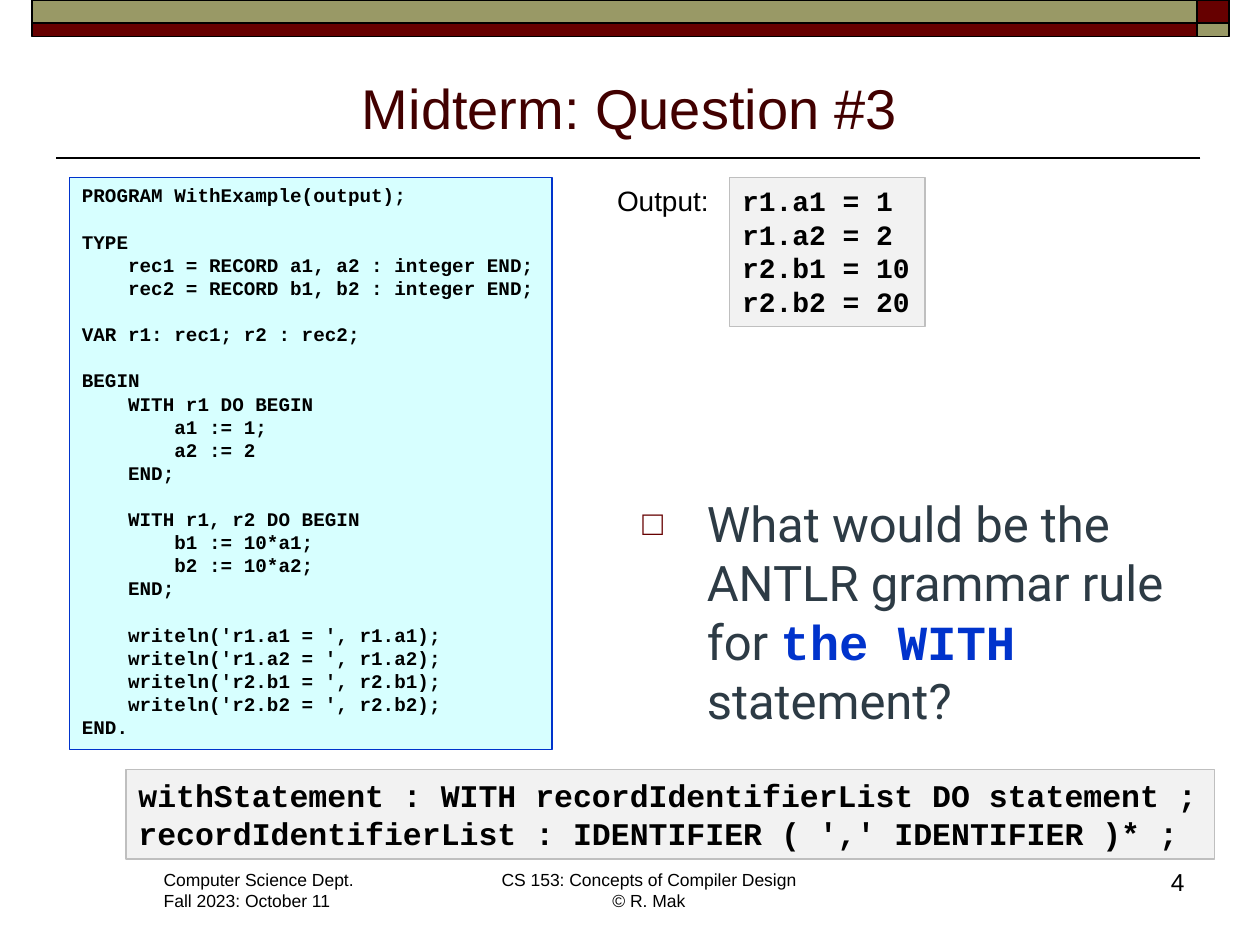
from lxml import etree
from pptx import Presentation
from pptx.dml.color import RGBColor
from pptx.enum.shapes import MSO_CONNECTOR, MSO_SHAPE
from pptx.enum.text import MSO_ANCHOR, MSO_AUTO_SIZE, PP_ALIGN
from pptx.oxml.ns import qn
from pptx.util import Cm, Pt

COLORS = {
    "black": "000000", "maroon": "660000", "olive": "999966", "title": "420000",
    "slate": "2D3B45", "blue": "0033CC", "cyan": "D7FFFF",
    "light gray": "F2F2F2", "gray": "BFBFBF",
}
SANS, MONO, BODY = "Arial", "Courier New", "Roboto"

PROGRAM = """PROGRAM WithExample(output);

TYPE
    rec1 = RECORD a1, a2 : integer END;
    rec2 = RECORD b1, b2 : integer END;

VAR r1: rec1; r2 : rec2;

BEGIN
    WITH r1 DO BEGIN
        a1 := 1;
        a2 := 2
    END;

    WITH r1, r2 DO BEGIN
        b1 := 10*a1;
        b2 := 10*a2;
    END;

    writeln('r1.a1 = ', r1.a1);
    writeln('r1.a2 = ', r1.a2);
    writeln('r2.b1 = ', r2.b1);
    writeln('r2.b2 = ', r2.b2);
END."""
OUTPUT = "r1.a1 = 1\nr1.a2 = 2\nr2.b1 = 10\nr2.b2 = 20"
GRAMMAR = [
    "withStatement : WITH recordIdentifierList DO statement ;",
    "recordIdentifierList : IDENTIFIER ( ',' IDENTIFIER )* ;",
]


def rgb(name):
    return RGBColor.from_string(COLORS[name])


def add_text(box, texts, size, font=SANS, color="black", align=PP_ALIGN.LEFT,
             bold=False, fit=True):
    """Add a text box with one paragraph for each text."""
    shape = slide.shapes.add_textbox(*[Cm(value) for value in box])
    frame = shape.text_frame
    frame.word_wrap = not fit
    frame.auto_size = MSO_AUTO_SIZE.SHAPE_TO_FIT_TEXT if fit else MSO_AUTO_SIZE.NONE
    for index, text in enumerate(texts):
        paragraph = frame.add_paragraph() if index else frame.paragraphs[0]
        paragraph.text = text
        paragraph.alignment = align
        paragraph.font.name = font
        paragraph.font.size = Pt(size)
        paragraph.font.bold = bold
        paragraph.font.color.rgb = rgb(color)
    return shape


presentation = Presentation()
presentation.slide_width, presentation.slide_height = Cm(25.4), Cm(19.05)
slide = presentation.slides.add_slide(presentation.slide_layouts[6])

# Rule under the title
rule = slide.shapes.add_connector(
    MSO_CONNECTOR.STRAIGHT, Cm(24.2), Cm(3.18), Cm(1.12), Cm(3.18))
rule.line.color.rgb = rgb("black")
rule.line.width = Pt(1)
etree.SubElement(rule._element.spPr, qn("a:effectLst"))

# Two-row band along the top edge
for top, height, colors in [(0, 0.46, ("olive", "maroon")),
                            (0.46, 0.28, ("maroon", "olive"))]:
    for left, width, color in zip((0.64, 24.13), (23.49, 0.64), colors):
        bar = slide.shapes.add_shape(
            MSO_SHAPE.RECTANGLE, Cm(left), Cm(top), Cm(width), Cm(height))
        bar.shadow.inherit = False
        bar.fill.solid()
        bar.fill.fore_color.rgb = rgb(color)
        bar.line.color.rgb = rgb("black")
        bar.line.width = Pt(1)

# Title
title = add_text((1.27, 1.14, 22.86, 1.83), ["Midterm: Question #3"], 32,
                 color="title", align=PP_ALIGN.CENTER, fit=False)
title.text_frame.vertical_anchor = MSO_ANCHOR.BOTTOM

# Question with a square bullet
question = add_text((12.7, 9.83, 11.43, 5.28), [""], 28, fit=False)
paragraph = question.text_frame.paragraphs[0]
properties = paragraph._p.get_or_add_pPr()
properties.set("marL", str(Cm(1.3)))
properties.set("indent", str(-Cm(1.3)))
bullet_color = etree.Element(qn("a:buClr"))
etree.SubElement(bullet_color, qn("a:srgbClr"), val=COLORS["maroon"])
bullet_parts = [
    bullet_color,
    etree.Element(qn("a:buSzPct"), val="70000"),
    etree.Element(qn("a:buFont"), typeface=SANS),
    etree.Element(qn("a:buChar"), char="□"),
]
for position, part in enumerate(bullet_parts):
    properties.insert(position, part)
for text, font, color, bold in [
    ("What would be the ANTLR grammar rule for ", BODY, "slate", False),
    ("the WITH", MONO, "blue", True),
    (" statement?", BODY, "slate", False),
]:
    run = paragraph.add_run()
    run.text = text
    run.font.name = font
    run.font.size = Pt(28)
    run.font.bold = bold
    run.font.color.rgb = rgb(color)

# Code panels
for box, texts, size, fill, line in [
    ((1.4, 3.58, 9.73, 11.53), [PROGRAM], 11, "cyan", "blue"),
    ((2.54, 15.52, 21.95, 1.8), GRAMMAR, 18, "light gray", "gray"),
    ((14.71, 3.58, 3.94, 3), [OUTPUT], 16, "light gray", "gray"),
]:
    panel = add_text(box, texts, size, font=MONO, bold=True)
    panel.fill.solid()
    panel.fill.fore_color.rgb = rgb(fill)
    panel.line.color.rgb = rgb(line)
    panel.line.width = Pt(0.75)
add_text((12.19, 3.58, 2.39, 0.94), ["Output:"], 16)

# Footer
add_text((3.05, 17.4, 4.37, 1.12),
         ["Computer Science Dept.", "Fall 2023: October 11"], 10)
add_text((9.83, 17.4, 6.5, 1.12),
         ["CS 153: Concepts of Compiler Design\n© R. Mak"], 10, align=PP_ALIGN.CENTER)
add_text((22.35, 17.35, 1.78, 1.27), ["4"], 14, align=PP_ALIGN.RIGHT, fit=False)

presentation.save("out.pptx")
